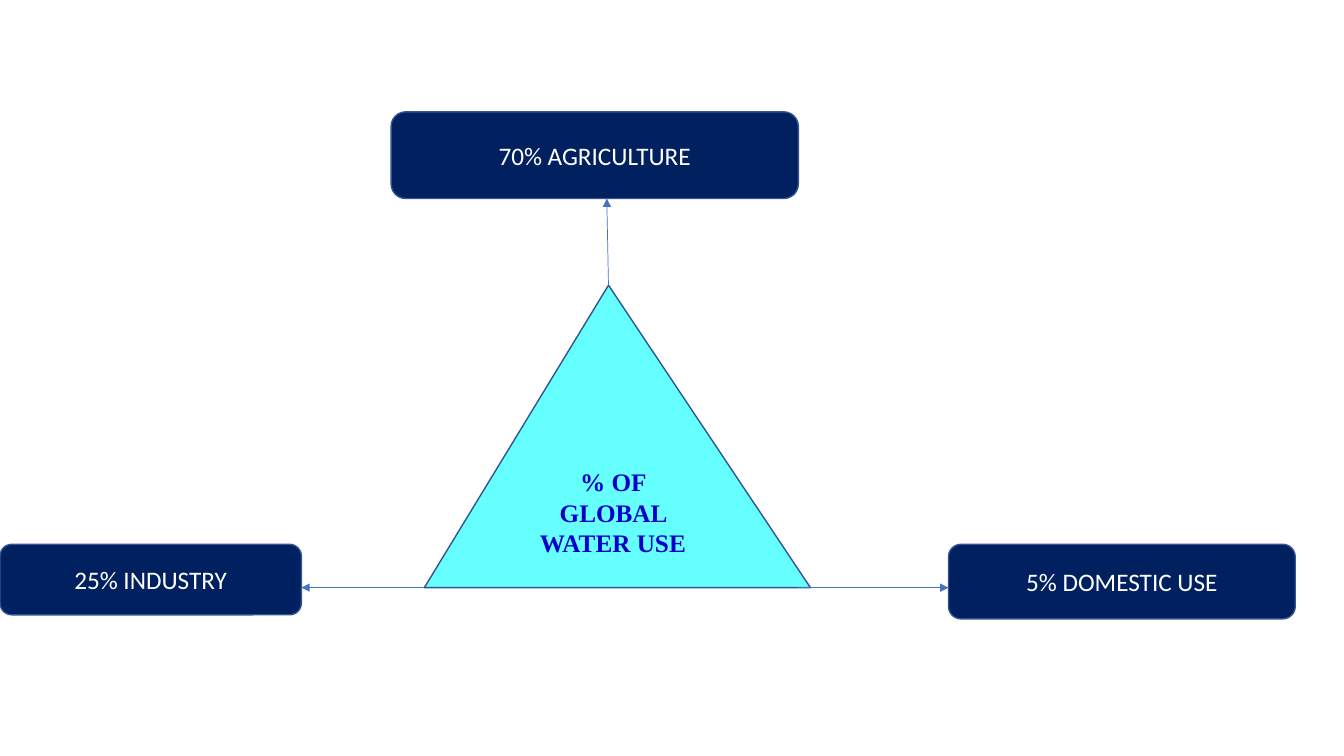
from dataclasses import dataclass

from lxml import etree
from pptx import Presentation
from pptx import util as u
from pptx.dml.color import RGBColor
from pptx.enum import shapes, text
from pptx.oxml import ns

SLIDE_WIDTH, SLIDE_HEIGHT = u.Inches(13.33), u.Inches(7.5)
COLUMNS, ROWS = 40, 15


@dataclass(frozen=True)
class Theme:
    navy: str = "002060"
    aqua: str = "66FFFF"
    outline: str = "325491"
    arrow: str = "4472C4"
    white: str = "FFFFFF"
    blue: str = "0000CC"
    label_font: str = "Calibri"
    title_font: str = "Times New Roman"
    text_size: float = 18
    outline_width: float = 1
    arrow_width: float = 0.5


THEME = Theme()


@dataclass(frozen=True)
class Block:
    """A labelled shape, measured in grid columns and rows."""
    label: str
    left: float
    top: float
    width: float
    height: float
    kind: shapes.MSO_SHAPE = shapes.MSO_SHAPE.ROUNDED_RECTANGLE
    fill: str = THEME.navy
    color: str = THEME.white
    font: str = THEME.label_font
    bold: bool = False

    @property
    def right(self) -> float:
        return self.left + self.width

    @property
    def bottom(self) -> float:
        return self.top + self.height


@dataclass(frozen=True)
class Arrow:
    start: tuple[float, float]
    end: tuple[float, float]


def column(count: float) -> int:
    return round(SLIDE_WIDTH * count / COLUMNS)


def row(count: float) -> int:
    return round(SLIDE_HEIGHT * count / ROWS)


def draw_block(slide, block: Block):
    shape = slide.shapes.add_shape(block.kind, column(block.left), row(block.top),
                                   column(block.width), row(block.height))
    shape.shadow.inherit = False
    shape.fill.solid()
    shape.fill.fore_color.rgb = RGBColor.from_string(block.fill)
    shape.line.color.rgb = RGBColor.from_string(THEME.outline)
    shape.line.width = u.Pt(THEME.outline_width)

    frame = shape.text_frame
    frame.text = block.label
    frame.word_wrap = True
    frame.vertical_anchor = text.MSO_ANCHOR.MIDDLE
    paragraph = frame.paragraphs[0]
    paragraph.alignment = text.PP_ALIGN.CENTER
    font = paragraph.runs[0].font
    font.name, font.size, font.bold = block.font, u.Pt(THEME.text_size), block.bold
    font.color.rgb = RGBColor.from_string(block.color)
    return shape


def draw_arrow(slide, arrow: Arrow) -> None:
    (start_x, start_y), (end_x, end_y) = arrow.start, arrow.end
    connector = slide.shapes.add_connector(
        shapes.MSO_CONNECTOR.STRAIGHT,
        column(start_x), row(start_y), column(end_x), row(end_y))
    connector.line.color.rgb = RGBColor.from_string(THEME.arrow)
    connector.line.width = u.Pt(THEME.arrow_width)
    # Arrowhead at the end, and no shadow
    etree.SubElement(connector.line._get_or_add_ln(), ns.qn("a:tailEnd"), type="triangle")
    etree.SubElement(connector._element.spPr, ns.qn("a:effectLst"))


# Central triangle and the three uses around it
APEX_SHARE = 0.477
TRIANGLE = Block("% OF GLOBAL WATER USE", 12.63, 5.66, 11.49, 6,
                 shapes.MSO_SHAPE.ISOSCELES_TRIANGLE, THEME.aqua,
                 THEME.blue, THEME.title_font, True)
AGRICULTURE = Block("70% AGRICULTURE", 11.64, 2.22, 12.12, 1.72)
DOMESTIC = Block("5% DOMESTIC USE", 28.23, 10.8, 10.32, 1.48)
INDUSTRY = Block("25% INDUSTRY", 0, 10.8, 8.97, 1.4)

# Arrows from the triangle's corners to the uses
APEX = TRIANGLE.left + APEX_SHARE * TRIANGLE.width
BASE = TRIANGLE.bottom
ARROWS = [
    Arrow((APEX, TRIANGLE.top), (18.06, AGRICULTURE.bottom)),
    Arrow((23.76, BASE), (DOMESTIC.left, BASE)),
    Arrow((TRIANGLE.left, BASE), (INDUSTRY.right, BASE)),
]


def main() -> None:
    presentation = Presentation()
    presentation.slide_width, presentation.slide_height = SLIDE_WIDTH, SLIDE_HEIGHT
    slide = presentation.slides.add_slide(presentation.slide_layouts[6])

    triangle = draw_block(slide, TRIANGLE)
    triangle.adjustments[0] = APEX_SHARE
    for arrow in ARROWS:
        draw_arrow(slide, arrow)
    for block in (AGRICULTURE, DOMESTIC, INDUSTRY):
        draw_block(slide, block)

    presentation.save("out.pptx")


if __name__ == "__main__":
    main()
